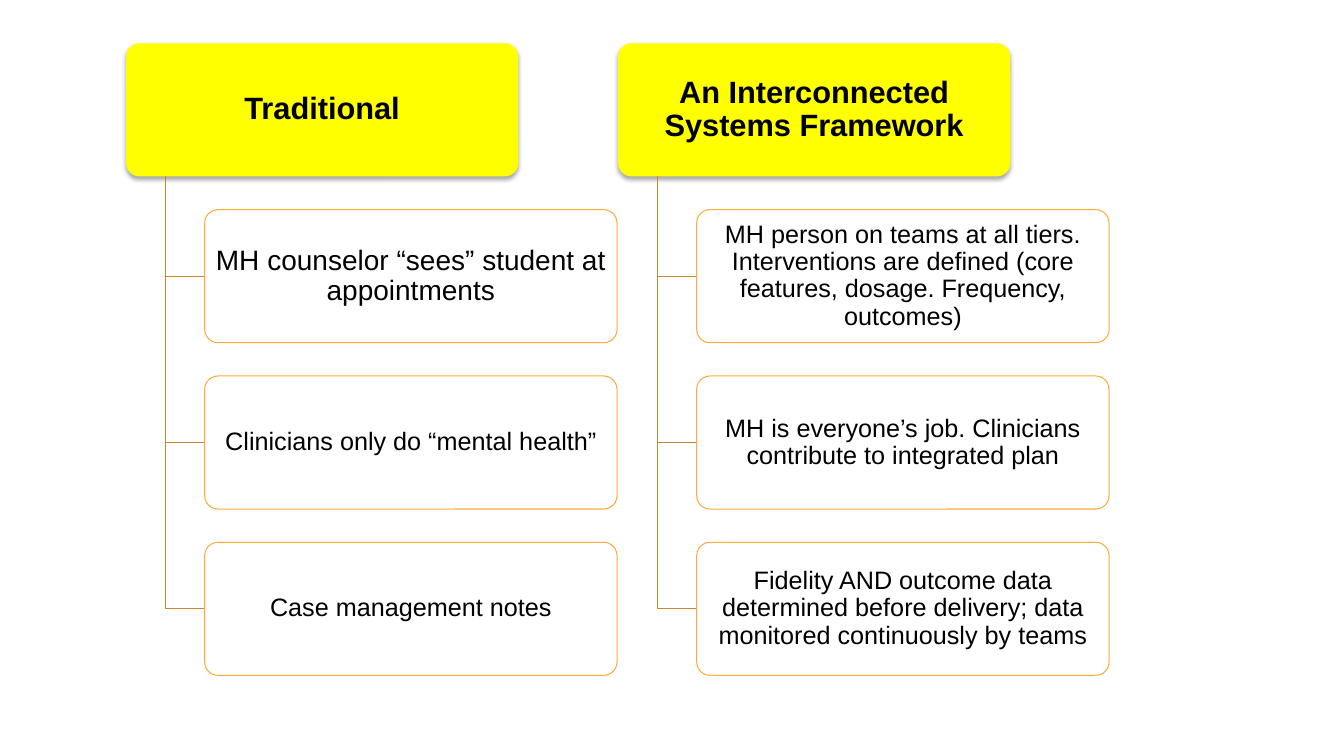
"""Build a slide comparing traditional work with an interconnected systems framework."""
import pptx
import pptx.util
import pptx.dml.color
import pptx.enum.shapes
import pptx.enum.text
import pptx.oxml.ns
from lxml import etree

Inches, Pt = pptx.util.Inches, pptx.util.Pt
RGBColor = pptx.dml.color.RGBColor

COLUMNS = [
    ("Traditional", [
        ("MH counselor “sees” student at appointments", 20),
        ("Clinicians only do “mental health”", 18),
        ("Case management notes", 18),
    ]),
    ("An Interconnected Systems Framework", [
        ("MH person on teams at all tiers. Interventions are defined "
         "(core features, dosage. Frequency, outcomes)", 18),
        ("MH is everyone’s job. Clinicians contribute to integrated plan", 18),
        ("Fidelity AND outcome data determined before delivery; "
         "data monitored continuously by teams", 18),
    ]),
]

YELLOW = RGBColor(0xFF, 0xFF, 0x00)
WHITE = RGBColor(0xFF, 0xFF, 0xFF)
BLACK = RGBColor(0x00, 0x00, 0x00)
ORANGE = RGBColor(0xFF, 0xAA, 0x3F)
BROWN = RGBColor(0xC9, 0x87, 0x30)

LEFT, TOP = 1.25, 0.43
COLUMN_STEP, ROW_STEP = 4.88, 1.65
HEADER_WIDTH, ITEM_WIDTH, BOX_HEIGHT = 3.89, 4.09, 1.32
STEM_INDENT, ITEM_INDENT = 0.39, 0.78


def add_child(parent, tag, **attributes):
    child = etree.SubElement(parent, pptx.oxml.ns.qn(tag))
    for name, value in attributes.items():
        child.set(name, str(value))
    return child


def add_box(page, left, top, width, fill):
    box = page.shapes.add_shape(
        pptx.enum.shapes.MSO_SHAPE.ROUNDED_RECTANGLE,
        Inches(left), Inches(top), Inches(width), Inches(BOX_HEIGHT))
    box.adjustments[0] = 0.1
    box.shadow.inherit = False
    box.fill.solid()
    box.fill.fore_color.rgb = fill
    return box


def write_text(box, text, size, bold=False, side=0.03, edge=0.02):
    frame = box.text_frame
    frame.word_wrap = True
    frame.vertical_anchor = pptx.enum.text.MSO_ANCHOR.MIDDLE
    frame.margin_left = frame.margin_right = Inches(side)
    frame.margin_top = frame.margin_bottom = Inches(edge)
    para = frame.paragraphs[0]
    para.alignment = pptx.enum.text.PP_ALIGN.CENTER
    para.line_spacing = 0.9
    span = para.add_run()
    span.text = text
    span.font.name = "Arial"
    span.font.size = Pt(size)
    span.font.bold = bold
    span.font.color.rgb = BLACK


def add_header(page, left, text):
    box = add_box(page, left, TOP, HEADER_WIDTH, YELLOW)
    box.line.fill.background()
    effects = box._element.spPr.find(pptx.oxml.ns.qn("a:effectLst"))
    shadow = add_child(effects, "a:outerShdw", blurRad=Pt(3.1), dist=Pt(1.8),
                       dir=90 * 60000, rotWithShape=0)
    color = add_child(shadow, "a:srgbClr", val=BLACK)
    add_child(color, "a:alpha", val=35000)
    write_text(box, text, 22, bold=True, side=0.05, edge=0.03)


def add_item(page, left, top, text, size):
    box = add_box(page, left, top, ITEM_WIDTH, WHITE)
    color = box._element.spPr.find(".//" + pptx.oxml.ns.qn("a:srgbClr"))
    add_child(color, "a:alpha", val=90000)
    box.line.color.rgb = ORANGE
    box.line.width = Pt(0.75)
    write_text(box, text, size)


def add_branch(page, stem, end, middle):
    builder = page.shapes.build_freeform(Inches(stem), Inches(TOP + BOX_HEIGHT))
    builder.add_line_segments([(Inches(stem), Inches(middle)),
                               (Inches(end), Inches(middle))], close=False)
    branch = builder.convert_to_shape()
    branch.shadow.inherit = False
    branch.fill.background()
    branch.line.color.rgb = BROWN
    branch.line.width = Pt(0.75)


def main():
    deck = pptx.Presentation()
    deck.slide_width, deck.slide_height = Inches(13.33), Inches(7.5)
    page = deck.slides.add_slide(deck.slide_layouts[6])
    for column, (heading, items) in enumerate(COLUMNS):
        left = LEFT + column * COLUMN_STEP
        item_left = left + ITEM_INDENT
        add_header(page, left, heading)
        for row, (text, size) in enumerate(items, start=1):
            top = TOP + row * ROW_STEP
            add_branch(page, left + STEM_INDENT, item_left, top + BOX_HEIGHT / 2)
            add_item(page, item_left, top, text, size)
    deck.save("out.pptx")


if __name__ == "__main__":
    main()
